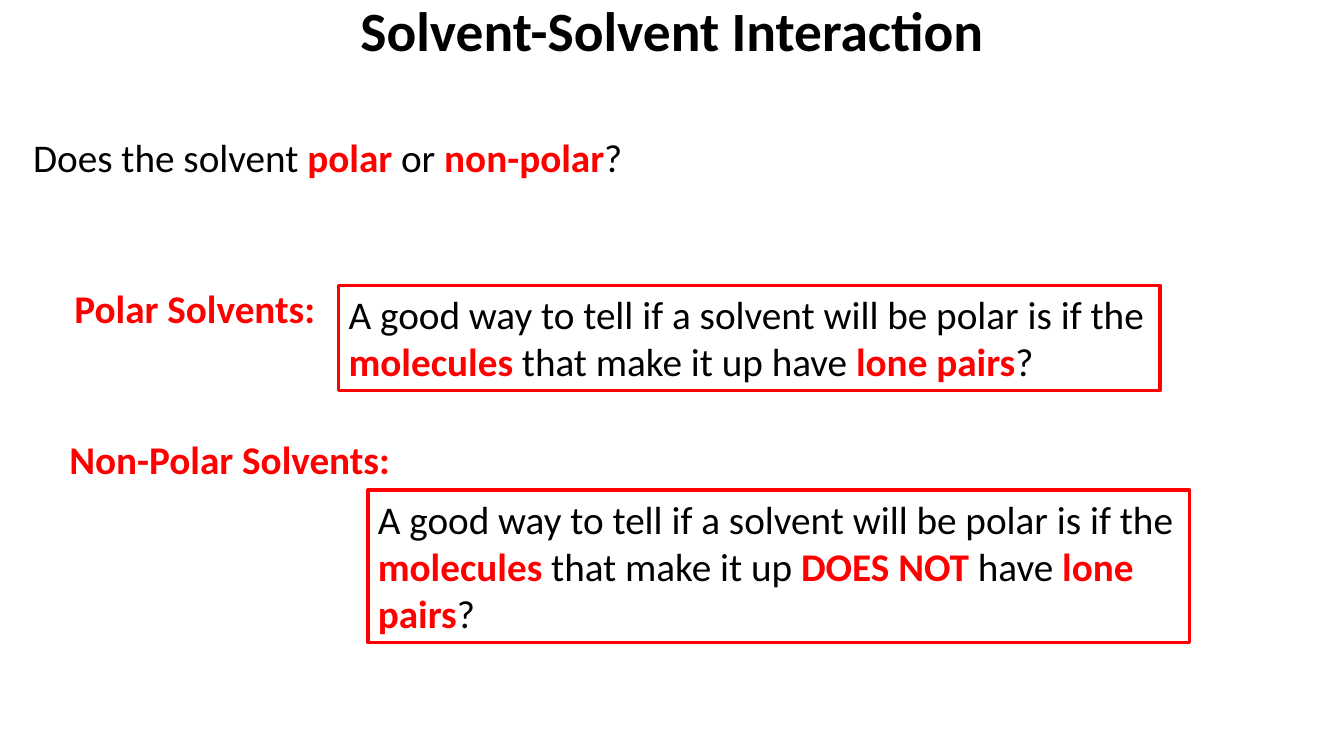
import dataclasses

import pptx
import pptx.dml.color
import pptx.enum.shapes
import pptx.enum.text
import pptx.util

BLACK = "000000"
RED = "FF0000"
FONT = "Calibri"
BODY_SIZE = 28


@dataclasses.dataclass(frozen=True)
class TextBlock:
    text: str
    left: float
    top: float
    width: float
    height: float
    outlined: bool = False


QUESTION = TextBlock("Does the solvent *polar* or *non-polar*?", 16.6, 91.4, 443.5, 41.2)
POLAR_LABEL = TextBlock("*Polar Solvents:*", 46.1, 199.4, 195.8, 41.2)
NON_POLAR_LABEL = TextBlock("*Non-Polar Solvents:*", 42.5, 307.4, 253.4, 41.2)
POLAR_RULE = TextBlock(
    "A good way to tell if a solvent will be polar is if the *molecules* "
    "that make it up have *lone pairs*?",
    241.9, 203.8, 586.8, 75.1, outlined=True,
)
NON_POLAR_RULE = TextBlock(
    "A good way to tell if a solvent will be polar is if the *molecules* "
    "that make it up *DOES NOT *have *lone pairs*?",
    262.8, 349.9, 586.8, 109, outlined=True,
)
BLOCKS = (QUESTION, POLAR_LABEL, NON_POLAR_LABEL, POLAR_RULE, NON_POLAR_RULE)


def color(hex_value: str) -> pptx.dml.color.RGBColor:
    return pptx.dml.color.RGBColor.from_string(hex_value)


def write_text(
    text_frame,
    text: str,
    *,
    size: float = BODY_SIZE,
    emphasis: str = RED,
    alignment=pptx.enum.text.PP_ALIGN.LEFT,
    anchor=pptx.enum.text.MSO_ANCHOR.TOP,
    line_spacing: float = 1.0,
    auto_size=pptx.enum.text.MSO_AUTO_SIZE.SHAPE_TO_FIT_TEXT,
) -> None:
    text_frame.word_wrap = True
    text_frame.auto_size = auto_size
    text_frame.vertical_anchor = anchor
    paragraph = text_frame.paragraphs[0]
    paragraph.alignment = alignment
    paragraph.line_spacing = line_spacing
    for index, part in enumerate(text.split("*")):
        if not part:
            continue
        emphasized = index % 2 == 1
        run = paragraph.add_run()
        run.text = part
        run.font.name = FONT
        run.font.size = pptx.util.Pt(size)
        run.font.bold = emphasized
        run.font.color.rgb = color(emphasis if emphasized else BLACK)


def draw_block(slide, block: TextBlock) -> None:
    bounds = [
        pptx.util.Pt(length)
        for length in (block.left, block.top, block.width, block.height)
    ]
    if block.outlined:
        shape = slide.shapes.add_shape(
            pptx.enum.shapes.MSO_SHAPE.RECTANGLE, *bounds
        )
        shape.shadow.inherit = False
        shape.fill.background()
        shape.line.color.rgb = color(RED)
        shape.line.width = pptx.util.Pt(2.5)
    else:
        shape = slide.shapes.add_textbox(*bounds)
    write_text(shape.text_frame, block.text)


def draw_title(slide, text: str, width: int) -> None:
    title = slide.shapes.title
    title.left, title.top = pptx.util.Pt(0), pptx.util.Pt(0)
    title.width, title.height = width, pptx.util.Pt(47.5)
    write_text(
        title.text_frame,
        f"*{text}*",
        size=39.6,
        emphasis=BLACK,
        alignment=pptx.enum.text.PP_ALIGN.CENTER,
        anchor=pptx.enum.text.MSO_ANCHOR.MIDDLE,
        line_spacing=0.9,
        auto_size=pptx.enum.text.MSO_AUTO_SIZE.NONE,
    )


def main() -> None:
    presentation = pptx.Presentation()
    presentation.slide_width = pptx.util.Pt(960)
    presentation.slide_height = pptx.util.Pt(540)
    title_only = presentation.slide_layouts.get_by_name("Title Only")
    slide = presentation.slides.add_slide(title_only)
    draw_title(slide, "Solvent-Solvent Interaction", presentation.slide_width)
    for block in BLOCKS:
        draw_block(slide, block)
    presentation.save("out.pptx")


if __name__ == "__main__":
    main()
